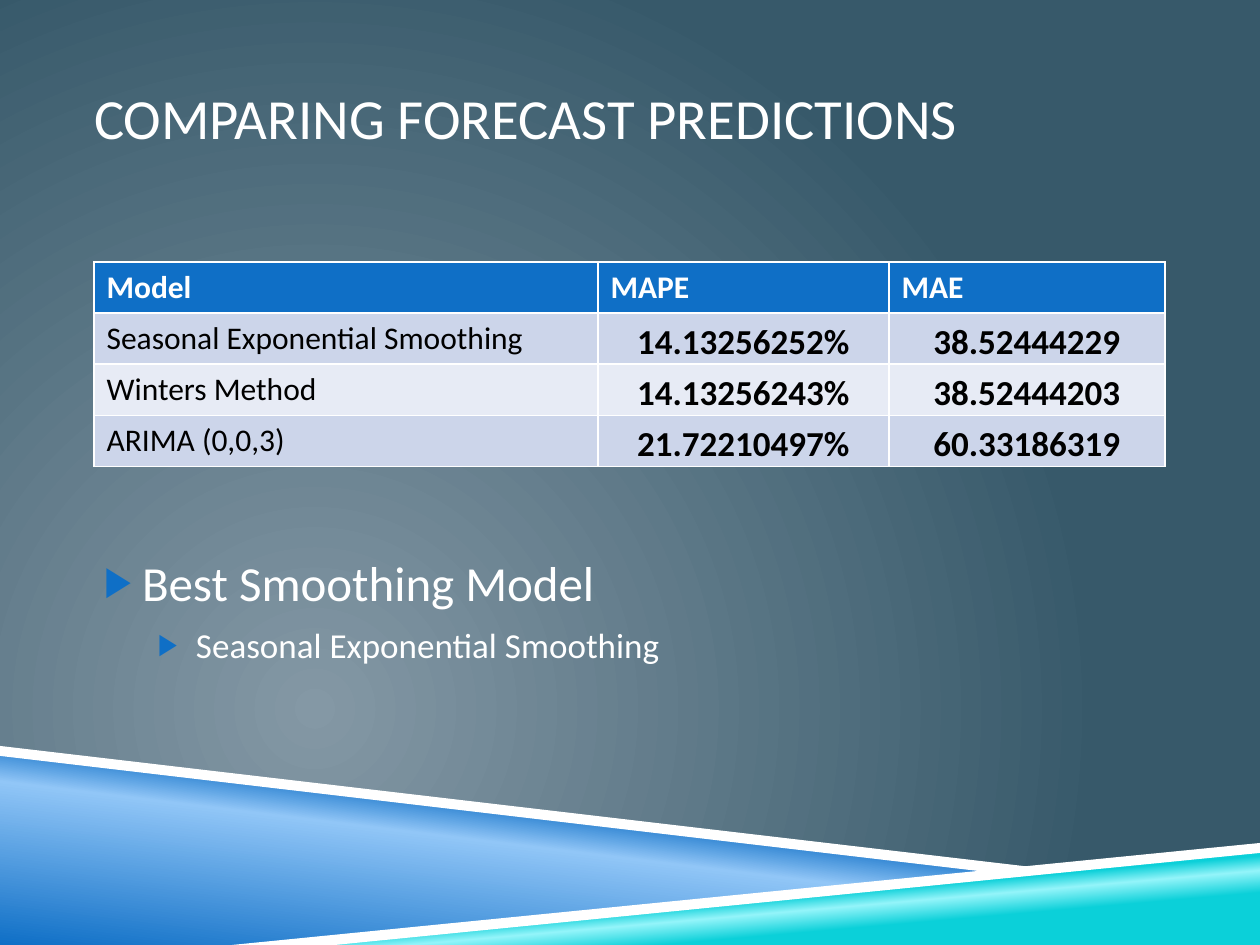
from dataclasses import dataclass

from lxml.etree import SubElement
from pptx import Presentation
from pptx.dml.color import RGBColor
from pptx.enum.text import MSO_ANCHOR, MSO_AUTO_SIZE, PP_ALIGN
from pptx.oxml import parse_xml
from pptx.oxml.ns import nsdecls, qn
from pptx.util import Pt

SCALE = 914400 / 126  # EMU in one px


@dataclass(frozen=True)
class Theme:
    font: str = "Calibri"
    white: str = "FFFFFF"
    black: str = "000000"
    blue: str = "0F6FC6"
    sky: str = "91C6F7"
    teal: str = "0BD0D9"
    aqua: str = "94F5FA"
    haze: str = "8498A5"
    slate: str = "37596A"
    bands: tuple = ("CCD5EA", "E7EBF5")
    title: float = 32.4
    lead: int = 28
    value: int = 20
    label: int = 18


THEME = Theme()
ROWS = [
    ("Model", "MAPE", "MAE"),
    ("Seasonal Exponential Smoothing", "14.13256252%", "38.52444229"),
    ("Winters Method", "14.13256243%", "38.52444203"),
    ("ARIMA (0,0,3)", "21.72210497%", "60.33186319"),
]
POINTS = [("Best Smoothing Model", THEME.lead, 48),
          ("Seasonal Exponential Smoothing", THEME.value, 102)]


def px(num):
    return round(num * SCALE)


def write(para, text, size=THEME.label, color=THEME.white, bold=False,
          align=PP_ALIGN.LEFT, before=0):
    para.alignment = align
    para.space_before = Pt(before)
    run = para.add_run()
    run.text = text
    font = run.font
    font.name, font.size, font.bold = THEME.font, Pt(size), bold
    font.color.rgb = RGBColor.from_string(color)


def place(shape, left, top, width, height):
    shape.left, shape.top = px(left), px(top)
    shape.width, shape.height = px(width), px(height)


def inset(part, left, top, right, low):
    part.margin_left, part.margin_top = px(left), px(top)
    part.margin_right, part.margin_bottom = px(right), px(low)


def blend(stops, shade):
    """Gradient fill element from (percent, colour) stops."""
    marks = "".join(f'<a:gs pos="{pos * 1000}"><a:srgbClr val="{color}"/></a:gs>'
                    for pos, color in stops)
    return parse_xml(f'<a:gradFill {nsdecls("a")} rotWithShape="1">'
                     f'<a:gsLst>{marks}</a:gsLst>{shade}</a:gradFill>')


def backdrop(slide):
    slide.background.fill.solid()
    props = slide.background._cSld.bg.bgPr
    shade = ('<a:path path="circle"><a:fillToRect l="50000" t="100000" '
             'r="100000" b="50000"/></a:path>')
    old = props.find(qn("a:solidFill"))
    props.replace(old, blend([(0, THEME.haze), (100, THEME.slate)], shade))


def wedge(slide, spots, layer, stops=None, angle=0):
    """Filled polygon, set behind the text at the given layer."""
    pen = slide.shapes.build_freeform(*spots[0], scale=SCALE)
    pen.add_line_segments(spots[1:], close=True)
    shape = pen.convert_to_shape()
    shape.shadow.inherit = False
    shape.line.fill.background()
    shape.fill.solid()
    shape.fill.fore_color.rgb = RGBColor.from_string(THEME.white)
    if stops:
        props = shape._element.spPr
        shade = f'<a:lin ang="{angle * 60000}" scaled="0"/>'
        props.replace(props.find(qn("a:solidFill")), blend(stops, shade))
    slide.shapes._spTree.insert(2 + layer, shape._element)


def bullet(para, left):
    props = para._p.get_or_add_pPr()
    props.set("marL", str(px(left)))
    props.set("indent", str(px(-38)))
    tint = SubElement(props, qn("a:buClr"))
    SubElement(tint, qn("a:srgbClr"), val=THEME.blue)
    SubElement(props, qn("a:buSzPct"), val="85000")
    SubElement(props, qn("a:buChar"), char="▶")


def frame(shape, anchor):
    text = shape.text_frame
    text.word_wrap = True
    text.auto_size = MSO_AUTO_SIZE.NONE
    text.vertical_anchor = anchor
    inset(text, 0, 6, 0, 6)
    return text


def points(shape):
    text = frame(shape, MSO_ANCHOR.TOP)
    for level, (line, size, left) in enumerate(POINTS):
        para = text.add_paragraph() if level else text.paragraphs[0]
        para.level = level
        bullet(para, left)
        write(para, line, size=size, before=7 if level else 0)


def grid(slide):
    widths = (504, 291, 276)
    table = slide.shapes.add_table(len(ROWS), len(widths), px(94), px(262),
                                   px(sum(widths)), px(51 * len(ROWS))).table
    for col, width in zip(table.columns, widths):
        col.width = px(width)
    for i, row in enumerate(ROWS):
        color = THEME.bands[(i - 1) % 2] if i else THEME.blue
        for j, text in enumerate(row):
            cell = table.cell(i, j)
            cell.fill.solid()
            cell.fill.fore_color.rgb = RGBColor.from_string(color)
            para = cell.text_frame.paragraphs[0]
            if i and j:
                cell.vertical_anchor = MSO_ANCHOR.BOTTOM
                inset(cell, 1, 1, 1, 0)
                write(para, text, size=THEME.value, color=THEME.black,
                      bold=True, align=PP_ALIGN.CENTER)
            else:
                write(para, text, bold=not i,
                      color=THEME.black if i else THEME.white)


def main():
    deck = Presentation()
    deck.slide_width, deck.slide_height = px(1260), px(945)
    slide = deck.slides.add_slide(deck.slide_layouts[1])

    # Background and the crossing bands at the foot
    backdrop(slide)
    wedge(slide, [(0, 752), (998, 872), (252, 945), (0, 945)], 0,
          [(0, THEME.blue), (52, THEME.sky), (66, THEME.blue)], 277)
    wedge(slide, [(249, 945), (1260, 847), (1260, 945)], 1,
          [(28, THEME.teal), (40, THEME.aqua), (48, THEME.teal)], 265)
    wedge(slide, [(0, 746), (0, 756), (995, 873), (1048, 869)], 2)
    wedge(slide, [(1260, 843), (232, 945), (335, 945), (1260, 853)], 3)

    # Title and list
    title, body = slide.placeholders
    place(title, 94, 38, 1071, 157)
    write(frame(title, MSO_ANCHOR.MIDDLE).paragraphs[0],
          "COMPARING FORECAST PREDICTIONS", size=THEME.title)
    place(body, 94, 546, 1071, 230)
    points(body)

    # Table of errors by model
    grid(slide)
    deck.save("out.pptx")


if __name__ == "__main__":
    main()
